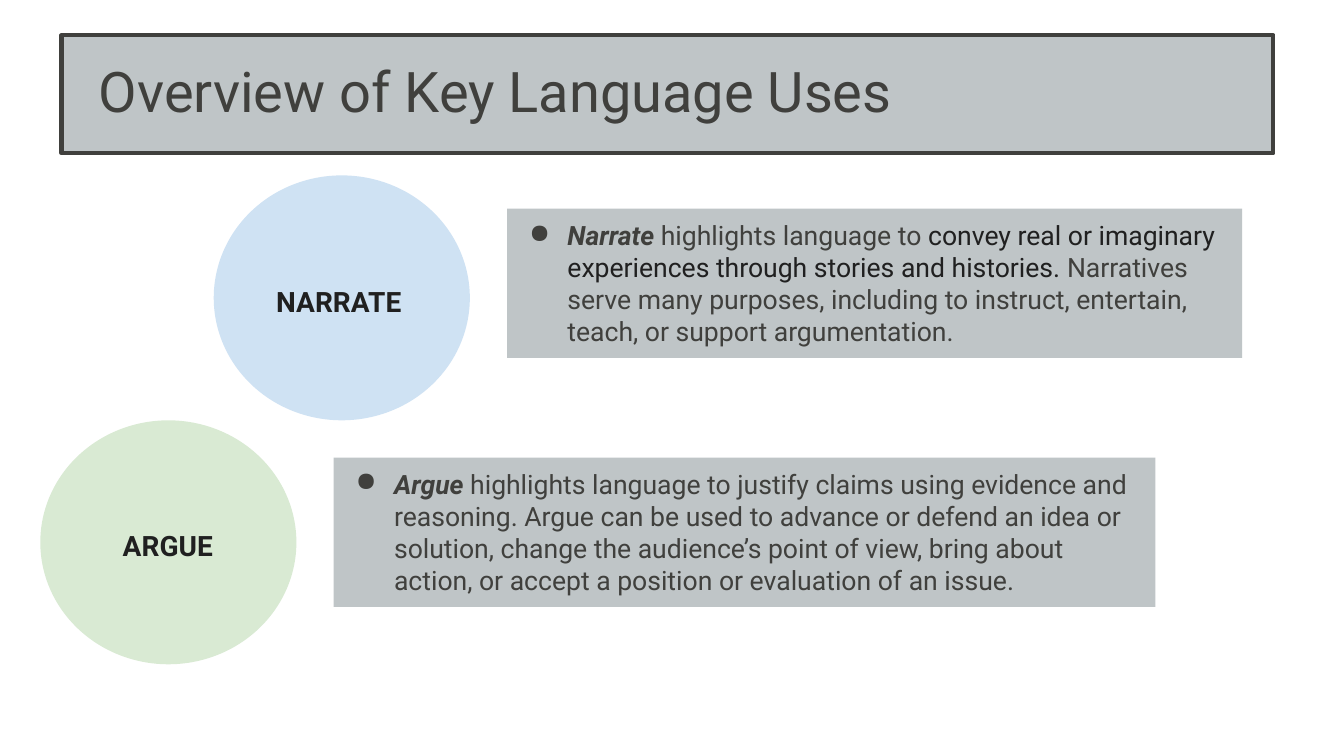
from lxml import etree
from pptx import Presentation
from pptx.dml.color import RGBColor
from pptx.enum.shapes import MSO_SHAPE
from pptx.enum.text import MSO_ANCHOR, MSO_AUTO_SIZE, PP_ALIGN
from pptx.oxml.ns import qn
from pptx.util import Emu, Pt

RECTANGLE, OVAL = MSO_SHAPE.RECTANGLE, MSO_SHAPE.OVAL
TOP, MIDDLE = MSO_ANCHOR.TOP, MSO_ANCHOR.MIDDLE
LEFT, CENTER = PP_ALIGN.LEFT, PP_ALIGN.CENTER
NO_AUTOFIT = MSO_AUTO_SIZE.NONE
TITLE_ONLY = 5
EMU_PER_PX = 9144


def px(length):
    return Emu(length * EMU_PER_PX)


def color(value):
    return RGBColor.from_string(value)


class KeyUsesPage:
    font = "Roboto"
    gray, dark, ink = "BFC5C7", "40403D", "202020"

    def __init__(self, deck):
        self.page = deck.slides.add_slide(deck.slide_layouts[TITLE_ONLY])

    def frame(self, shape, anchor, insets):
        frame = shape.text_frame
        frame.word_wrap = True
        frame.auto_size = NO_AUTOFIT
        frame.vertical_anchor = anchor
        (frame.margin_left, frame.margin_top,
         frame.margin_right, frame.margin_bottom) = map(px, insets)
        return frame

    def style(self, para, size, text_color, bold=None):
        para.font.name = self.font
        para.font.size = Pt(size)
        para.font.bold = bold
        para.font.color.rgb = color(text_color)

    def title(self, text, place):
        box = self.page.shapes.title
        box.left, box.top, box.width, box.height = map(px, place)
        box.fill.solid()
        box.fill.fore_color.rgb = color(self.gray)
        box.line.color.rgb = color(self.dark)
        box.line.width = Pt(3)
        para = self.frame(box, MIDDLE, (37, 5, 10, 5)).paragraphs[0]
        para.text = text
        para.alignment = LEFT
        para.line_spacing = 0.9
        self.style(para, 40, self.dark)

    def shape(self, shapes, kind, place, fill):
        box = shapes.add_shape(kind, *map(px, place))
        box.shadow.inherit = False
        box.fill.solid()
        box.fill.fore_color.rgb = color(fill)
        box.line.fill.background()
        return box

    def badge(self, text, circle, label, fill):
        shapes = self.page.shapes.add_group_shape().shapes
        self.shape(shapes, OVAL, circle, fill)
        box = self.shape(shapes, RECTANGLE, label, fill)
        para = self.frame(box, MIDDLE, (13, 13, 13, 13)).paragraphs[0]
        para.text = text
        para.alignment = CENTER
        para.line_spacing = 1.15
        self.style(para, 20, self.ink, bold=True)

    def description(self, term, parts, place):
        box = self.shape(self.page.shapes, RECTANGLE, place, self.gray)
        para = self.frame(box, TOP, (10, 10, 10, 10)).paragraphs[0]
        para.alignment = LEFT
        properties = para._p.get_or_add_pPr()
        properties.set("marL", str(px(50)))
        properties.set("indent", str(px(-38)))
        etree.SubElement(properties, qn("a:buChar"), char="●")
        self.style(para, 19, self.dark)
        for text, text_color in [(term, self.dark), *parts]:
            span = para.add_run()
            span.text = text
            span.font.color.rgb = color(text_color)
        para.runs[0].font.bold = True
        para.runs[0].font.italic = True


def main():
    deck = Presentation()
    deck.slide_width, deck.slide_height = px(1333), px(750)
    uses = KeyUsesPage(deck)
    uses.title("Overview of Key Language Uses", (61, 35, 1202, 117))
    uses.badge("NARRATE", (212, 174, 254, 243), (259, 264, 154, 64), "CFE2F3")
    uses.badge("ARGUE", (40, 417, 254, 242), (93, 504, 147, 68), "D9EAD3")
    uses.description("Narrate ", [
        ("highlights language to ", uses.dark),
        ("convey real or imaginary experiences through stories and histories.",
         uses.ink),
        (" Narratives serve many purposes, including to instruct, entertain, "
         "teach, or support argumentation.", uses.dark),
    ], (503, 207, 729, 148))
    uses.description("Argue ", [
        ("highlights language to justify claims using evidence and reasoning. "
         "Argue can be used to advance or defend an idea or solution, change "
         "the audience’s point of view, bring about action, or accept a "
         "position or evaluation of an issue.", uses.dark),
    ], (331, 454, 815, 148))
    deck.save("out.pptx")


if __name__ == "__main__":
    main()
